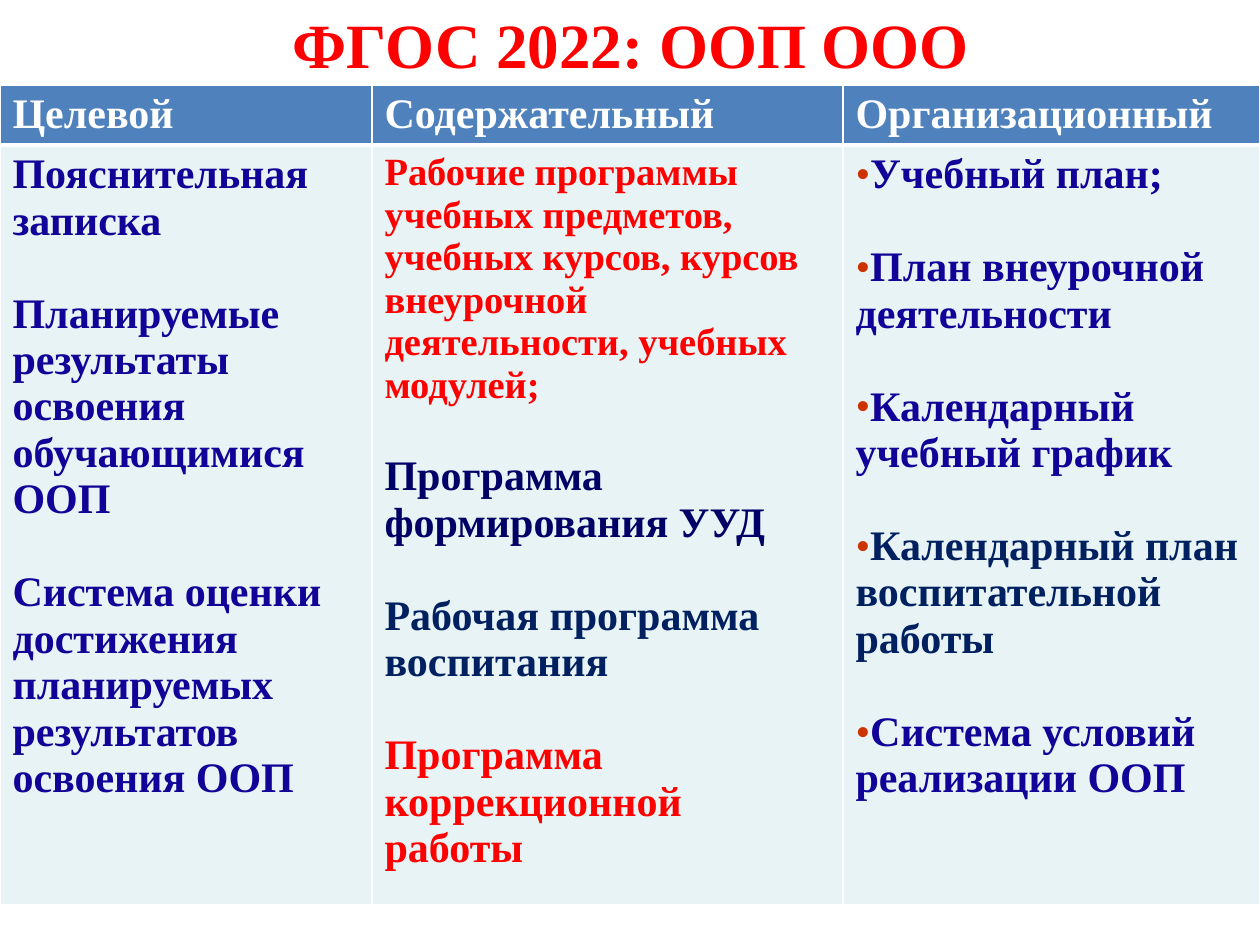
import pptx
import pptx.dml.color
import pptx.enum.text
import pptx.oxml
import pptx.oxml.ns
import pptx.util

SCALE = 914400 / 126
FONT = "Times New Roman"
GAP = 26.6
COLORS = {
    "red": "FF0000", "white": "FFFFFF", "head": "4F81BD", "body": "E7F3F4",
    "blue": "110397", "navy": "000066", "dark": "002060", "dot": "CC3300",
}
COLS = [372, 471, 417]
ROWS = [60, 760]
HEADS = ["Целевой", "Содержательный", "Организационный"]
# Each item: text, colour, size in points
GOALS = [
    ("Пояснительная записка", "blue", 24),
    ("Планируемые результаты освоения обучающимися ООП", "blue", 24),
    ("Система оценки достижения планируемых результатов освоения ООП", "blue", 24),
]
CONTENT = [
    ("Рабочие программы учебных предметов, учебных курсов, курсов внеурочной "
     "деятельности, учебных модулей;", "red", 22),
    ("Программа формирования УУД", "navy", 24),
    ("Рабочая программа воспитания", "dark", 24),
    ("Программа коррекционной работы", "red", 24),
]
PLANS = [
    ("Учебный план;", "blue", 24),
    ("План внеурочной деятельности", "blue", 24),
    ("Календарный учебный график", "blue", 24),
    ("Календарный план воспитательной работы", "dark", 24),
    ("Система условий реализации ООП", "blue", 24),
]


def px(num):
    return pptx.util.Emu(round(num * SCALE))


def rgb(name):
    return pptx.dml.color.RGBColor.from_string(COLORS[name])


def apply(item, values):
    for name, value in values.items():
        setattr(item, name, value)


def add_text(para, text, color, size):
    run = para.add_run()
    run.text = text
    apply(run.font, {"name": FONT, "size": pptx.util.Pt(size), "bold": True})
    run.font.color.rgb = rgb(color)


def add_dot(para):
    """Put a coloured bullet right before the text, with no indent."""
    props = para._p.get_or_add_pPr()
    props.set("marL", "0")
    props.set("indent", "0")
    space = pptx.oxml.ns.nsdecls("a")
    for xml in (
        f'<a:buClr {space}><a:srgbClr val="{COLORS["dot"]}"/></a:buClr>',
        f'<a:buFont {space} typeface="{FONT}"/>',
        f'<a:buChar {space} char="•"/>',
    ):
        props.append(pptx.oxml.parse_xml(xml))


def paint(cell, fill, thick):
    """Fill a cell and rule it in white, with a heavy line on the thick side."""
    cell.fill.solid()
    cell.fill.fore_color.rgb = rgb(fill)
    props = cell._tc.get_or_add_tcPr()
    for i, side in enumerate("LRTB"):
        width = pptx.util.Pt(3 if side == thick else 1)
        props.insert(i, pptx.oxml.parse_xml(
            f'<a:ln{side} {pptx.oxml.ns.nsdecls("a")} w="{width}"><a:solidFill>'
            f'<a:srgbClr val="{COLORS["white"]}"/></a:solidFill></a:ln{side}>'))


def fill_cell(cell, items, dots=False):
    frame = cell.text_frame
    for i, item in enumerate(items):
        para = frame.add_paragraph() if i else frame.paragraphs[0]
        if i:
            para.space_before = pptx.util.Pt(GAP)
        if dots:
            add_dot(para)
        add_text(para, *item)


def add_title(slide, text):
    title = slide.shapes.title
    apply(title, {"left": px(64), "top": px(0), "width": px(1134), "height": px(86)})
    frame = title.text_frame
    apply(frame, {
        "word_wrap": True,
        "auto_size": pptx.enum.text.MSO_AUTO_SIZE.NONE,
        "vertical_anchor": pptx.enum.text.MSO_ANCHOR.MIDDLE,
    })
    para = frame.paragraphs[0]
    para.alignment = pptx.enum.text.PP_ALIGN.CENTER
    add_text(para, text, "red", 36)


def add_grid(slide):
    table = slide.shapes.add_table(
        len(ROWS), len(COLS), px(0), px(85), px(sum(COLS)), px(sum(ROWS))).table
    for col, width in zip(table.columns, COLS):
        col.width = px(width)
    for row, height in zip(table.rows, ROWS):
        row.height = px(height)
    for i, (head, items) in enumerate(zip(HEADS, [GOALS, CONTENT, PLANS])):
        top, body = table.cell(0, i), table.cell(1, i)
        paint(top, "head", "B")
        paint(body, "body", "T")
        fill_cell(top, [(head, "white", 24)])
        fill_cell(body, items, dots=items is PLANS)


def main():
    deck = pptx.Presentation()
    apply(deck, {"slide_width": px(1260), "slide_height": px(945)})
    slide = deck.slides.add_slide(deck.slide_layouts[5])
    add_title(slide, "ФГОС 2022: ООП ООО")
    add_grid(slide)
    deck.save("out.pptx")


if __name__ == "__main__":
    main()
